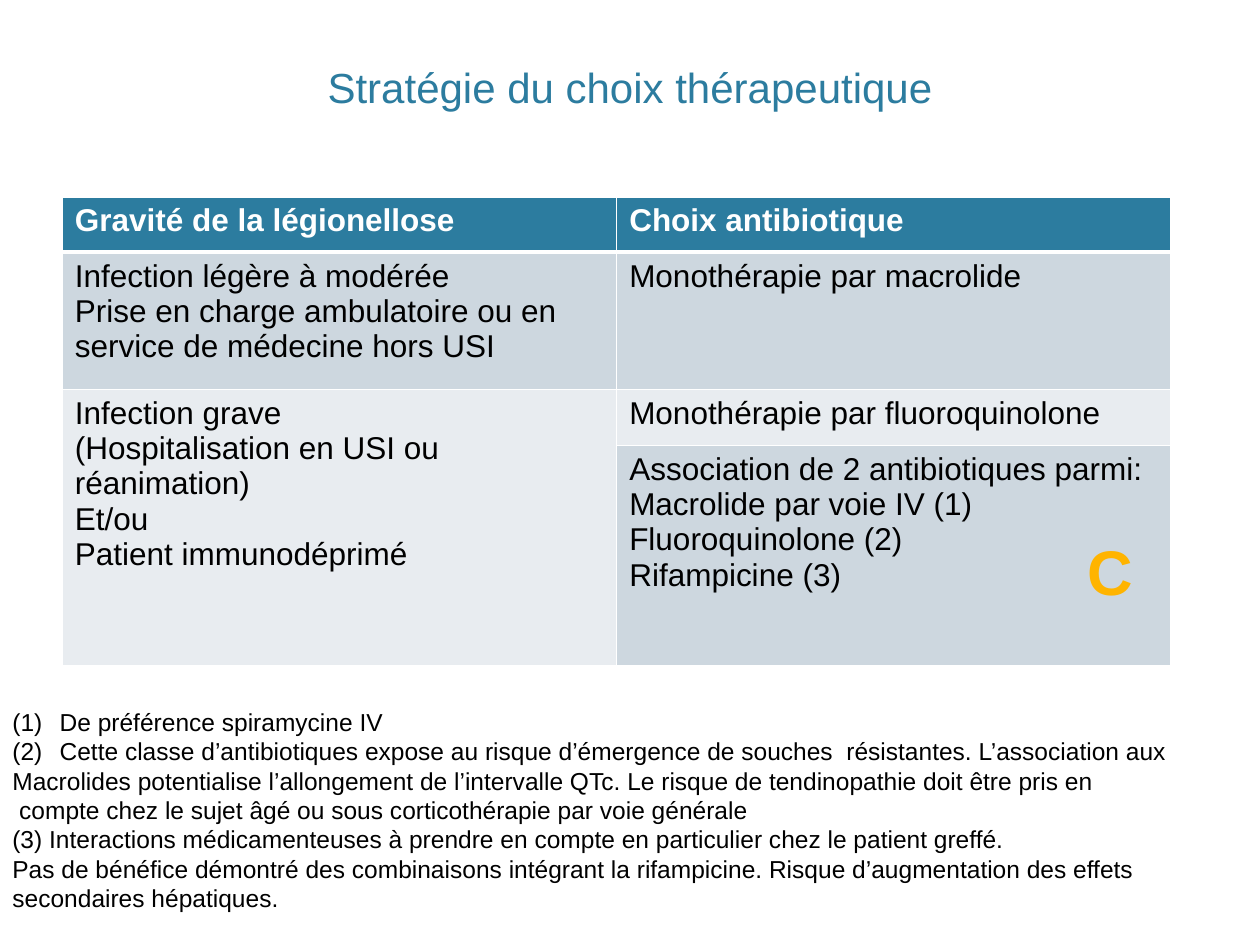
from lxml import etree
from pptx import Presentation
from pptx.dml.color import RGBColor
from pptx.enum import text
from pptx.oxml import ns
from pptx.util import Pt

COLORS = {"teal": "2C7C9F", "white": "FFFFFF", "black": "000000",
          "band_dark": "CDD7DF", "band_light": "E8ECF0", "grade": "FFB400"}


def style(p, size, color, bold=False):
    for r in p.runs:
        r.font.name = "Arial"
        r.font.size = Pt(size)
        r.font.bold = bold
        r.font.color.rgb = RGBColor.from_string(COLORS[color])


def set_borders(cell, bottom):
    """Draw white cell borders, 1 pt except for the given bottom and the header's edge."""
    widths = {"lnL": 1, "lnR": 1, "lnT": 1, "lnB": bottom}
    tc_pr = cell._tc.get_or_add_tcPr()
    for i, (side, width) in enumerate(widths.items()):
        ln = etree.Element(ns.qn(f"a:{side}"), w=str(Pt(width)))
        fill = etree.SubElement(ln, ns.qn("a:solidFill"))
        etree.SubElement(fill, ns.qn("a:srgbClr"), val=COLORS["white"])
        tc_pr.insert(i, ln)


prs = Presentation()
prs.slide_width, prs.slide_height = Pt(720), Pt(540)
s = prs.slides.add_slide(prs.slide_layouts[5])

# Title
title = s.shapes.title
title.left, title.top, title.width, title.height = Pt(43.2), Pt(20.9), Pt(633.6), Pt(46.8)
tf = title.text_frame
tf.text = "Stratégie du choix thérapeutique"
tf.vertical_anchor = text.MSO_ANCHOR.BOTTOM
tf.paragraphs[0].alignment = text.PP_ALIGN.CENTER
style(tf.paragraphs[0], 24, "teal")

# Treatment table
rows = [
    (31.5, "teal", ["Gravité de la légionellose", "Choix antibiotique"]),
    (78.5, "band_dark", [
        "Infection légère à modérée\n"
        "Prise en charge ambulatoire ou en service de médecine hors USI",
        "Monothérapie par macrolide"]),
    (32, "band_light", [
        "Infection grave\n(Hospitalisation en USI ou réanimation)\n"
        "Et/ou\nPatient immunodéprimé",
        "Monothérapie par fluoroquinolone"]),
    (126, "band_dark", [
        "",
        "Association de 2 antibiotiques parmi:\nMacrolide par voie IV (1)\n"
        "Fluoroquinolone (2)\nRifampicine (3)"]),
]
table = s.shapes.add_table(len(rows), 2, Pt(35.6), Pt(112.6), Pt(633.6), Pt(268)).table
for col in table.columns:
    col.width = Pt(316.8)
table.cell(2, 0).merge(table.cell(3, 0))
for i, (height, fill, contents) in enumerate(rows):
    table.rows[i].height = Pt(height)
    header = i == 0
    for j, content in enumerate(contents):
        cell = table.cell(i, j)
        cell.fill.solid()
        cell.fill.fore_color.rgb = RGBColor.from_string(COLORS[fill])
        set_borders(cell, 3 if header else 1)
        if not cell.is_spanned:
            cell.text_frame.text = content
            for p in cell.text_frame.paragraphs:
                style(p, 18, "white" if header else "black", header)

# Footnotes: the first two are numbered automatically
notes = [
    "De préférence spiramycine IV",
    "Cette classe d’antibiotiques expose au risque d’émergence de souches  résistantes. "
    "L’association aux",
    "Macrolides potentialise l’allongement de l’intervalle QTc. "
    "Le risque de tendinopathie doit être pris en",
    " compte chez le sujet âgé ou sous corticothérapie par voie générale",
    "(3) Interactions médicamenteuses à prendre en compte en particulier "
    "chez le patient greffé.",
    "Pas de bénéfice démontré des combinaisons intégrant la rifampicine. "
    "Risque d’augmentation des effets secondaires hépatiques.",
]
tf = s.shapes.add_textbox(Pt(0), Pt(400.3), Pt(720), Pt(126)).text_frame
tf.word_wrap = True
tf.text = "\n".join(notes)
for i, p in enumerate(tf.paragraphs):
    if i < 2:
        p_pr = p._p.get_or_add_pPr()
        p_pr.set("marL", str(Pt(27)))
        p_pr.set("indent", str(-Pt(27)))
        etree.SubElement(p_pr, ns.qn("a:buFont"), typeface="Arial")
        etree.SubElement(p_pr, ns.qn("a:buAutoNum"), type="arabicParenBoth")
    style(p, 14, "black")

# Evidence grade
tf = s.shapes.add_textbox(Pt(614.2), Pt(301), Pt(39.6), Pt(51)).text_frame
tf.word_wrap = False
tf.text = "C"
tf.paragraphs[0].alignment = text.PP_ALIGN.CENTER
style(tf.paragraphs[0], 36, "grade", True)

prs.save("out.pptx")
